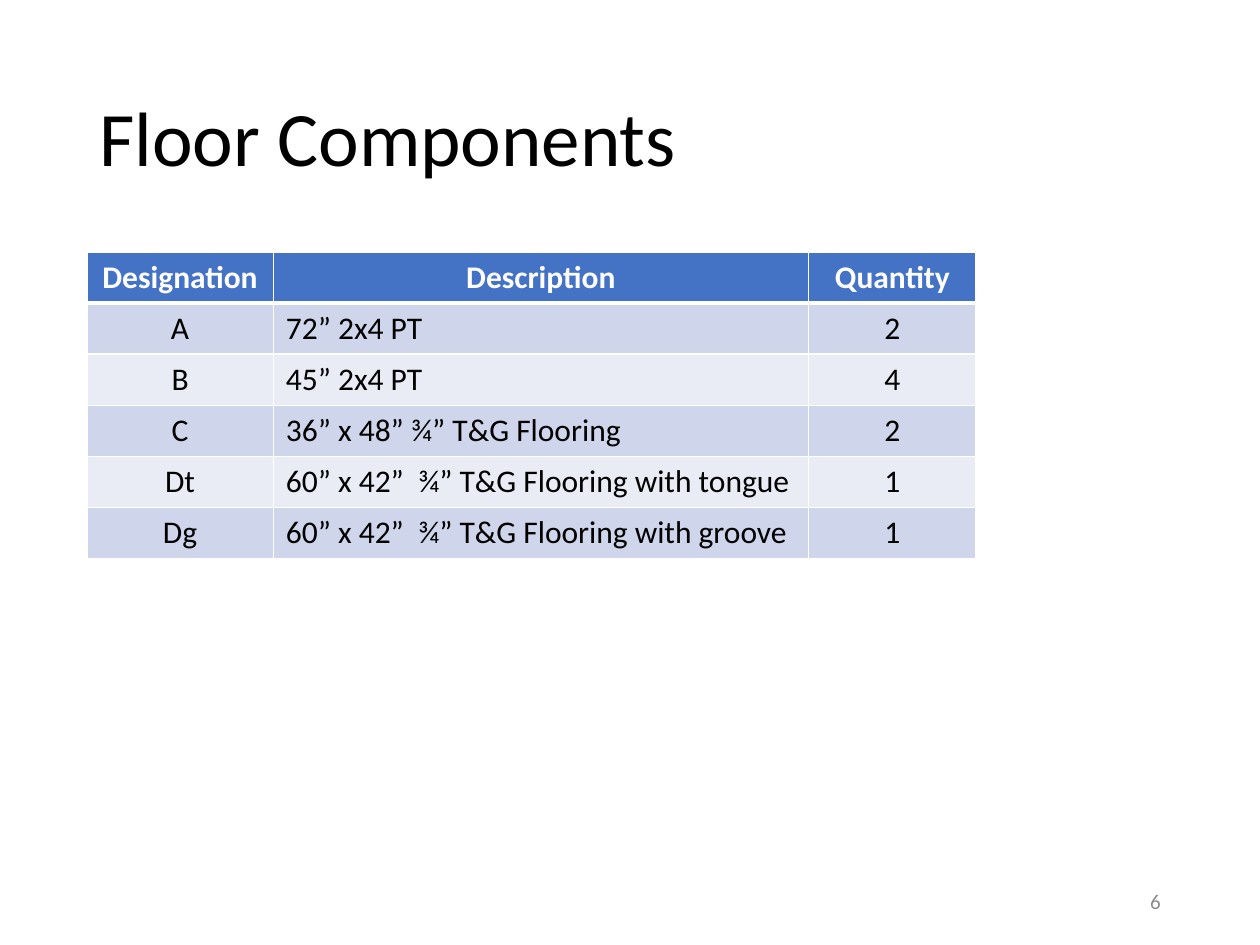
from dataclasses import dataclass

from lxml import etree
from pptx import Presentation
from pptx import util as u
from pptx.dml.color import RGBColor
from pptx.enum import text
from pptx.oxml import ns


@dataclass(frozen=True)
class Theme:
    face: str = "Calibri"
    ink: str = "000000"
    paper: str = "FFFFFF"
    mute: str = "8C8C8C"
    head: str = "4472C4"
    bands: tuple = ("CFD5EA", "E9EBF5")
    title: int = 44
    body: int = 18
    note: int = 12
    thin: int = 1
    thick: int = 3


LEFT, MID, RIGHT = (text.PP_ALIGN.LEFT, text.PP_ALIGN.CENTER,
                    text.PP_ALIGN.RIGHT)


class Deck:
    def __init__(self, theme):
        self.theme = theme
        self.prs = Presentation()
        self.prs.slide_width, self.prs.slide_height = u.Cm(25.4), u.Cm(19.05)
        self.slide = self.prs.slides.add_slide(self.prs.slide_layouts[6])

    def words(self, para, string, size, color, align=LEFT, bold=False):
        para.alignment = align
        run = para.add_run()
        run.text = string
        form = {"name": self.theme.face, "size": u.Pt(size), "bold": bold}
        for key, value in form.items():
            setattr(run.font, key, value)
        run.font.color.rgb = RGBColor.from_string(color)

    def label(self, place, string, size, color, align=LEFT, lead=1.0):
        box = self.slide.shapes.add_textbox(*map(u.Cm, place))
        frame = box.text_frame
        form = {"word_wrap": True, "vertical_anchor": text.MSO_ANCHOR.MIDDLE}
        for key, value in form.items():
            setattr(frame, key, value)
        para = frame.paragraphs[0]
        para.line_spacing = lead
        self.words(para, string, size, color, align)

    def edge(self, cell, top, base):
        """Border a cell; the lines must come before its fill in the XML."""
        props = cell._tc.get_or_add_tcPr()
        sides = {"L": self.theme.thin, "R": self.theme.thin,
                 "T": top, "B": base}
        for i, (side, width) in enumerate(sides.items()):
            line = etree.Element(ns.qn(f"a:ln{side}"), w=str(u.Pt(width)))
            fill = etree.SubElement(line, ns.qn("a:solidFill"))
            etree.SubElement(fill, ns.qn("a:srgbClr"), val=self.theme.paper)
            props.insert(i, line)

    def table(self, left, top, widths, height, rows, aligns):
        t = self.theme
        grid = self.slide.shapes.add_table(
            len(rows), len(widths), u.Cm(left), u.Cm(top),
            u.Cm(sum(widths)), u.Cm(height * len(rows))).table
        for col, width in zip(grid.columns, widths):
            col.width = u.Cm(width)
        for r, row in enumerate(rows):
            grid.rows[r].height = u.Cm(height)
            head = r == 0
            fill = t.head if head else t.bands[(r - 1) % 2]
            for c, string in enumerate(row):
                cell = grid.cell(r, c)
                cell.fill.solid()
                cell.fill.fore_color.rgb = RGBColor.from_string(fill)
                self.edge(cell, t.thick if r == 1 else t.thin,
                          t.thick if head else t.thin)
                self.words(cell.text_frame.paragraphs[0], string, t.body,
                           t.paper if head else t.ink,
                           MID if head else aligns[c], head)


ROWS = [
    ("Designation", "Description", "Quantity"),
    ("A", "72” 2x4 PT", "2"),
    ("B", "45” 2x4 PT", "4"),
    ("C", "36” x 48” ¾” T&G Flooring", "2"),
    ("Dt", "60” x 42”  ¾” T&G Flooring with tongue", "1"),
    ("Dg", "60” x 42”  ¾” T&G Flooring with groove", "1"),
]


def main():
    theme = Theme()
    deck = Deck(theme)
    deck.label((1.75, 1.01, 21.9, 3.68), "Floor Components",
               theme.title, theme.ink, lead=0.9)
    deck.table(1.75, 5.08, (3.76, 10.79, 3.38), 1.03, ROWS, (MID, LEFT, MID))
    deck.label((17.94, 17.66, 5.71, 1.01), "6", theme.note, theme.mute, RIGHT)
    deck.prs.save("out.pptx")


if __name__ == "__main__":
    main()
